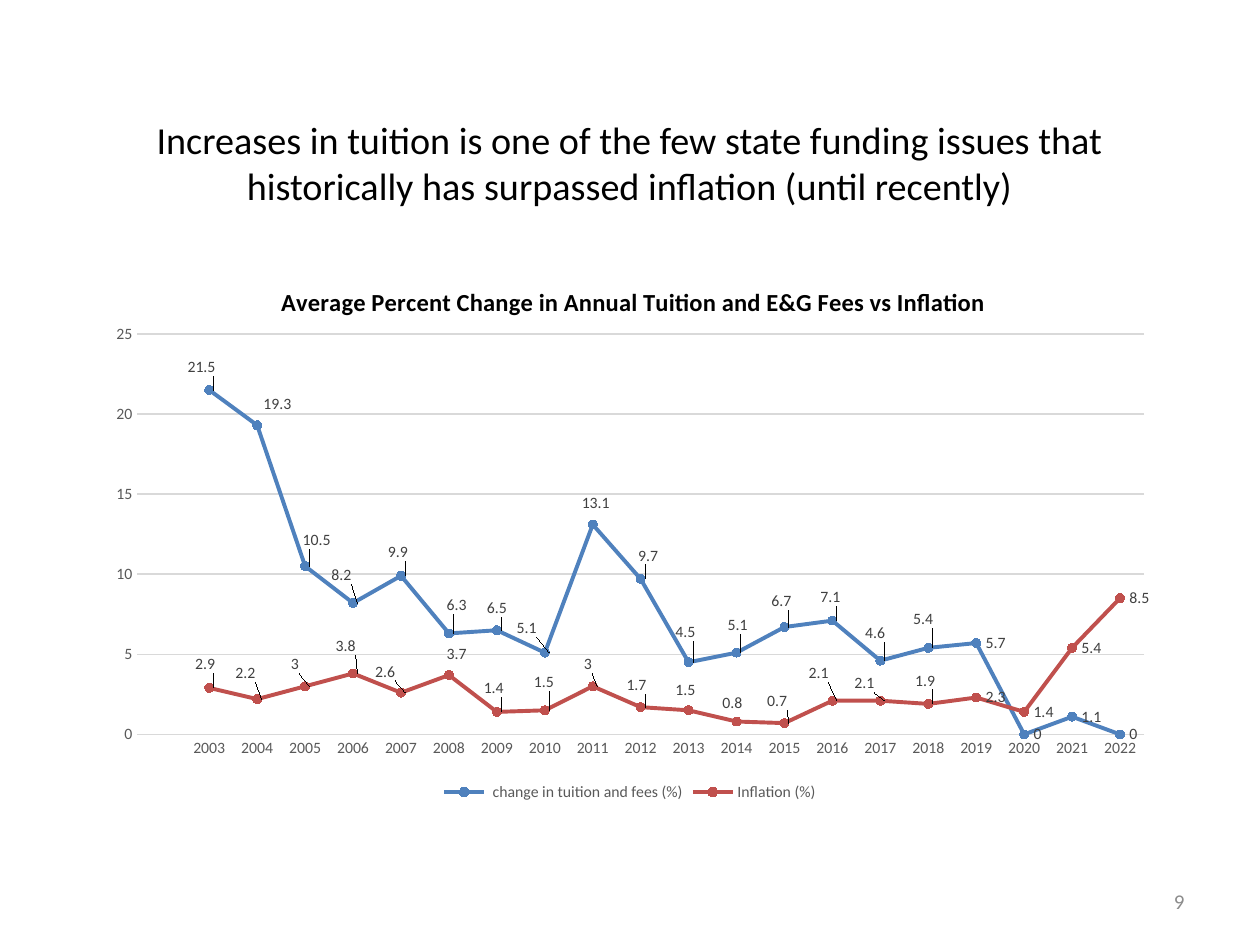
from lxml import etree
from pptx import Presentation
from pptx.chart.data import CategoryChartData
from pptx.dml.color import RGBColor
from pptx.enum.chart import (XL_CHART_TYPE, XL_LABEL_POSITION, XL_LEGEND_POSITION,
                             XL_MARKER_STYLE, XL_TICK_MARK)
from pptx.enum.text import MSO_ANCHOR, PP_ALIGN
from pptx.oxml.ns import qn
from pptx.util import Inches, Pt

LINE_MARKERS = XL_CHART_TYPE.LINE_MARKERS
LABEL_RIGHT = XL_LABEL_POSITION.RIGHT
LEGEND_BOTTOM = XL_LEGEND_POSITION.BOTTOM
CIRCLE = XL_MARKER_STYLE.CIRCLE
NO_TICK = XL_TICK_MARK.NONE
MIDDLE = MSO_ANCHOR.MIDDLE
CENTER, RIGHT = PP_ALIGN.CENTER, PP_ALIGN.RIGHT

FONT = "Calibri"
BLACK, GREY, LABEL_GREY, GRID = "000000", "595959", "404040", "D9D9D9"
TITLE = ("Increases in tuition is one of the few state funding issues that "
         "historically has surpassed inflation (until recently)")
CHART_TITLE = "Average Percent Change in Annual Tuition and E&G Fees vs Inflation"
YEARS = [""] + [str(year) for year in range(2003, 2023)]
TUITION = [None, 21.5, 19.3, 10.5, 8.2, 9.9, 6.3, 6.5, 5.1, 13.1, 9.7, 4.5,
           5.1, 6.7, 7.1, 4.6, 5.4, 5.7, 0, 1.1, 0]
INFLATION = [None, 2.9, 2.2, 3, 3.8, 2.6, 3.7, 1.4, 1.5, 3, 1.7, 1.5,
             0.8, 0.7, 2.1, 2.1, 1.9, 2.3, 1.4, 5.4, 8.5]
TUITION_SHIFTS = [(-2.9, -4.2), (-0.3, -3.8), (-1.1, -4.7), (-2.9, -5.1),
                  (-2.1, -4.2), (-1.1, -5.1), (-1.8, -4), (-3.5, -4.5),
                  (-1.9, -3.8), (-1.1, -4.2), (-2.1, -5.4), (-1.7, -4.9),
                  (-2.1, -4.7), (-2, -4.2), (-2.3, -4.9), (-2.3, -5.1)]
INFLATION_SHIFTS = [(-2.2, -4.2), (-2.9, -4.7), (-2.2, -4), (-2.5, -4.9),
                    (-3.3, -3.8), (-1.1, -3.8), (-2.1, -4.2), (-1.9, -5.1),
                    (-1.7, -4), (-2.2, -4), (-2.1, -3.6), (-2.2, -3.4),
                    (-2.5, -4), (-3.1, -4.9), (-3.3, -3.1), (-2.1, -4.2)]
SERIES = [(" change in tuition and fees (%)", TUITION, "4F81BD", TUITION_SHIFTS),
          ("Inflation (%)", INFLATION, "C0504D", INFLATION_SHIFTS)]


def rgb(color):
    """Turn a hex string into a colour."""
    return RGBColor.from_string(color)


def set_font(font, size, color, bold=False):
    """Set face, size, colour and weight of a font."""
    font.name, font.size, font.bold = FONT, Pt(size), bold
    font.color.rgb = rgb(color)


def set_line(line, color, width):
    """Give a line its colour and width in points."""
    line.color.rgb = rgb(color)
    line.width = Pt(width)


def make_layout(**values):
    """Return a manual chart layout with the given settings in schema order."""
    layout = etree.Element(qn("c:layout"))
    manual = etree.SubElement(layout, qn("c:manualLayout"))
    for name, value in values.items():
        etree.SubElement(manual, qn(f"c:{name}")).set("val", str(value))
    return layout


def place(parent, before, layout):
    """Replace the layout of a chart part, following the named child if present."""
    for old in parent.findall(qn("c:layout")):
        parent.remove(old)
    previous = parent.find(qn(before)) if before else None
    parent.insert(0 if previous is None else parent.index(previous) + 1, layout)


def add_text(slide, box, text, size, color, align):
    """Add one vertically centred paragraph in a box."""
    tf = slide.shapes.add_textbox(*box).text_frame
    tf.word_wrap = True
    tf.vertical_anchor = MIDDLE
    p = tf.paragraphs[0]
    p.text, p.alignment = text, align
    set_font(p.font, size, color)


def style_axes(chart):
    """Style both axes and the horizontal gridlines."""
    for axis in (chart.category_axis, chart.value_axis):
        axis.major_tick_mark = axis.minor_tick_mark = NO_TICK
        set_font(axis.tick_labels.font, 9, GREY)
    set_line(chart.category_axis.format.line, GRID, 0.75)
    values = chart.value_axis
    values.minimum_scale, values.maximum_scale, values.major_unit = 0, 25, 5
    values.format.line.fill.background()
    set_line(values.major_gridlines.format.line, GRID, 0.75)


def style_series(series, color, shifts):
    """Colour a series and shift its point labels by percentages of the chart."""
    series.smooth = False
    set_line(series.format.line, color, 2.25)
    marker = series.marker
    marker.style, marker.size = CIRCLE, 5
    marker.format.fill.solid()
    marker.format.fill.fore_color.rgb = rgb(color)
    set_line(marker.format.line, color, 0.75)
    labels = series.data_labels
    labels.show_value, labels.position = True, LABEL_RIGHT
    set_font(labels.font, 9, LABEL_GREY)
    for index in range(1, len(shifts) + 1):
        label = series.points[index].data_label
        label.position = LABEL_RIGHT
        set_font(label.font, 9, LABEL_GREY)
    for element, (dx, dy) in zip(series._element.xpath("c:dLbls/c:dLbl"), shifts):
        place(element, "c:idx", make_layout(x=dx / 100, y=dy / 100))


def add_line_chart(slide, box):
    """Add the tuition and inflation line chart in a box."""
    data = CategoryChartData()
    data.categories = YEARS
    for name, values, _, _ in SERIES:
        data.add_series(name, values)
    chart = slide.shapes.add_chart(LINE_MARKERS, *box, data).chart
    set_font(chart.font, 10, BLACK)
    chart.has_title = True
    p = chart.chart_title.text_frame.paragraphs[0]
    p.text = CHART_TITLE
    set_font(p.font, 14, BLACK, bold=True)
    place(chart.chart_title._element, "c:tx",
          make_layout(xMode="edge", yMode="edge", x=0.17, y=0.05))
    chart.has_legend = True
    chart.legend.position = LEGEND_BOTTOM
    chart.legend.include_in_layout = False
    set_font(chart.legend.font, 9, GREY)
    style_axes(chart)
    plot = chart.plots[0]
    plot.vary_by_categories = False
    for series, (_, _, color, shifts) in zip(plot.series, SERIES):
        style_series(series, color, shifts)
    place(chart._chartSpace.chart.plotArea, None,
          make_layout(layoutTarget="inner", xMode="edge", yMode="edge",
                      x=0.04, y=0.146, w=0.94, h=0.724))


def main():
    """Build and save the slide."""
    prs = Presentation()
    prs.slide_width, prs.slide_height = Inches(10), Inches(7.5)
    s = prs.slides.add_slide(prs.slide_layouts[6])
    left, width = Inches(0.75), Inches(8.5)
    add_text(s, (left, Inches(0.72), width, Inches(1.14)), TITLE, 21.8, BLACK, CENTER)
    add_line_chart(s, (left, Inches(2.01), width, Inches(4.39)))
    add_text(s, (Inches(7.17), Inches(6.95), Inches(2.33), Inches(0.4)),
             "9", 12, "8C8C8C", RIGHT)
    prs.save("out.pptx")


if __name__ == "__main__":
    main()
